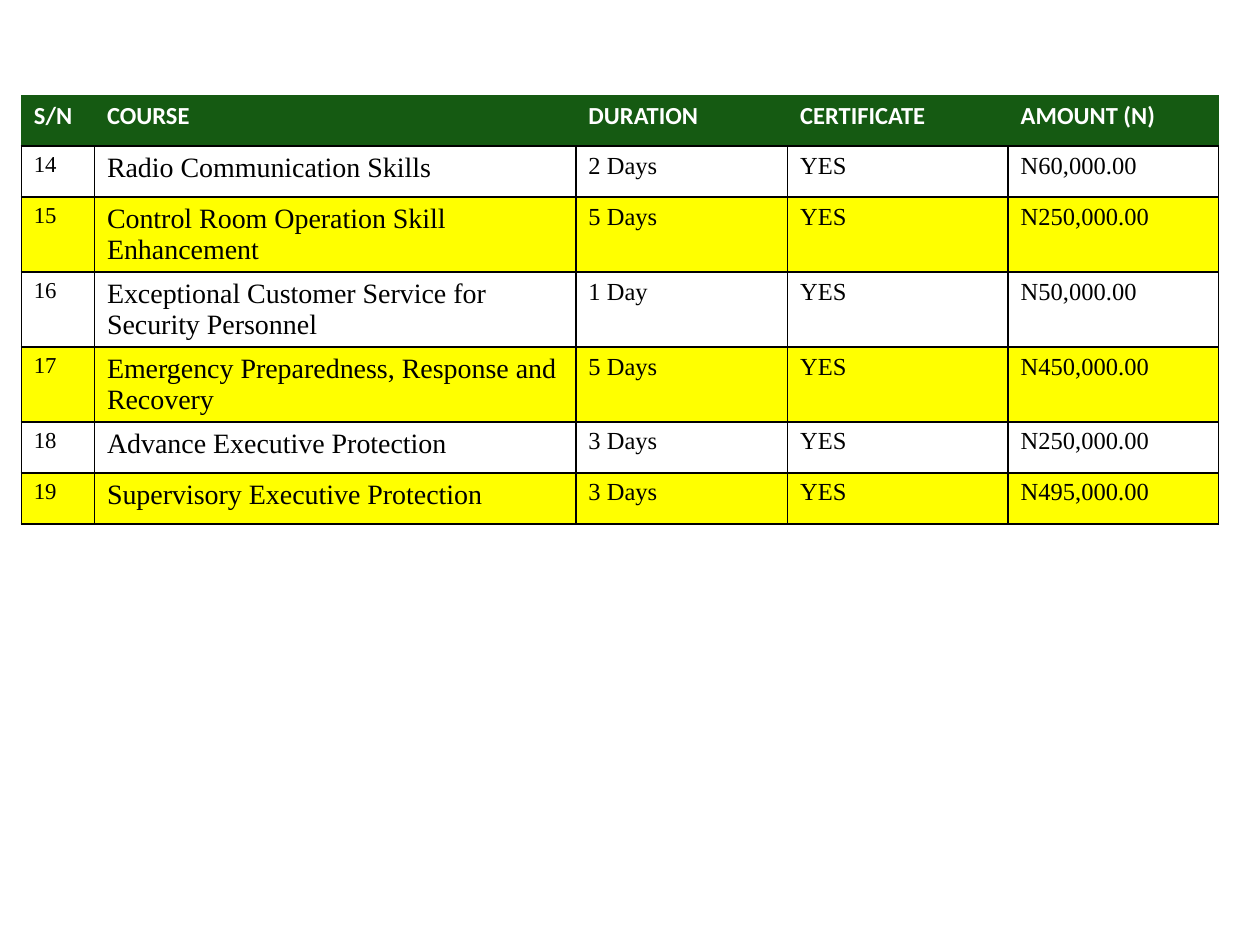
import lxml.etree
import pptx
import pptx.dml.color
import pptx.oxml.ns
import pptx.util

Cm = pptx.util.Cm
COLORS = {"header": "155A12", "highlight": "FFFF00", "text": "000000",
          "header_text": "FFFFFF", "border": "000000"}
HEADINGS = ["S/N", "COURSE", "DURATION", "CERTIFICATE", "AMOUNT (N)"]
COURSES = [
    ["14", "Radio Communication Skills", "2 Days", "YES", "N60,000.00"],
    ["15", "Control Room Operation Skill Enhancement", "5 Days", "YES", "N250,000.00"],
    ["16", "Exceptional Customer Service for Security Personnel", "1 Day", "YES", "N50,000.00"],
    ["17", "Emergency Preparedness, Response and Recovery", "5 Days", "YES", "N450,000.00"],
    ["18", "Advance Executive Protection", "3 Days", "YES", "N250,000.00"],
    ["19", "Supervisory Executive Protection", "3 Days", "YES", "N495,000.00"],
]
COLUMN_SHARES = [0.58, 3.82, 1.68, 1.75, 1.67]
BODY_SIZES = [13, 16, 14, 14, 14]


def rgb(name):
    """Return the named palette colour."""
    return pptx.dml.color.RGBColor.from_string(COLORS[name])


def write_text(frame, text, *, size, font, color, bold=False):
    """Put one formatted run of text into a text frame."""
    run = frame.paragraphs[0].add_run()
    run.text = text
    run.font.size = pptx.util.Pt(size)
    run.font.name = font
    run.font.bold = bold
    run.font.color.rgb = rgb(color)


def set_borders(cell, visible_sides):
    """Draw the visible sides of a cell and clear the others."""
    qn = pptx.oxml.ns.qn
    properties = cell._tc.get_or_add_tcPr()
    for side in "LRTB":
        line = lxml.etree.SubElement(properties, qn(f"a:ln{side}"), w=str(pptx.util.Pt(1)))
        if side in visible_sides:
            fill = lxml.etree.SubElement(line, qn("a:solidFill"))
            lxml.etree.SubElement(fill, qn("a:srgbClr"), val=COLORS["border"])
        else:
            lxml.etree.SubElement(line, qn("a:noFill"))


def fill_cell(cell, color):
    """Fill a cell with a palette colour, or leave it clear."""
    if color:
        cell.fill.solid()
        cell.fill.fore_color.rgb = rgb(color)
    else:
        cell.fill.background()


def add_course_table(slide, left, top, width, height):
    """Add the course price list inside the given box."""
    rows = [HEADINGS] + COURSES
    table = slide.shapes.add_table(len(rows), len(HEADINGS), left, top, width, height).table
    table.horz_banding = False
    for column, share in zip(table.columns, COLUMN_SHARES):
        column.width = int(width * share / sum(COLUMN_SHARES))
    for row_index, values in enumerate(rows):
        for column_index, text in enumerate(values):
            cell = table.cell(row_index, column_index)
            if row_index == 0:
                set_borders(cell, "B")
                fill_cell(cell, "header")
                write_text(cell.text_frame, text, size=14, font="Calibri",
                           color="header_text", bold=True)
            else:
                set_borders(cell, "LRTB")
                fill_cell(cell, "highlight" if row_index % 2 == 0 else None)
                write_text(cell.text_frame, text, size=BODY_SIZES[column_index],
                           font="Times New Roman", color="text")


def main():
    """Build and save the presentation."""
    presentation = pptx.Presentation()
    presentation.slide_width, presentation.slide_height = Cm(25.4), Cm(19.05)
    slide = presentation.slides.add_slide(presentation.slide_layouts[6])
    add_course_table(slide, Cm(0.43), Cm(1.92), Cm(24.14), Cm(7.2))
    presentation.save("out.pptx")


if __name__ == "__main__":
    main()
